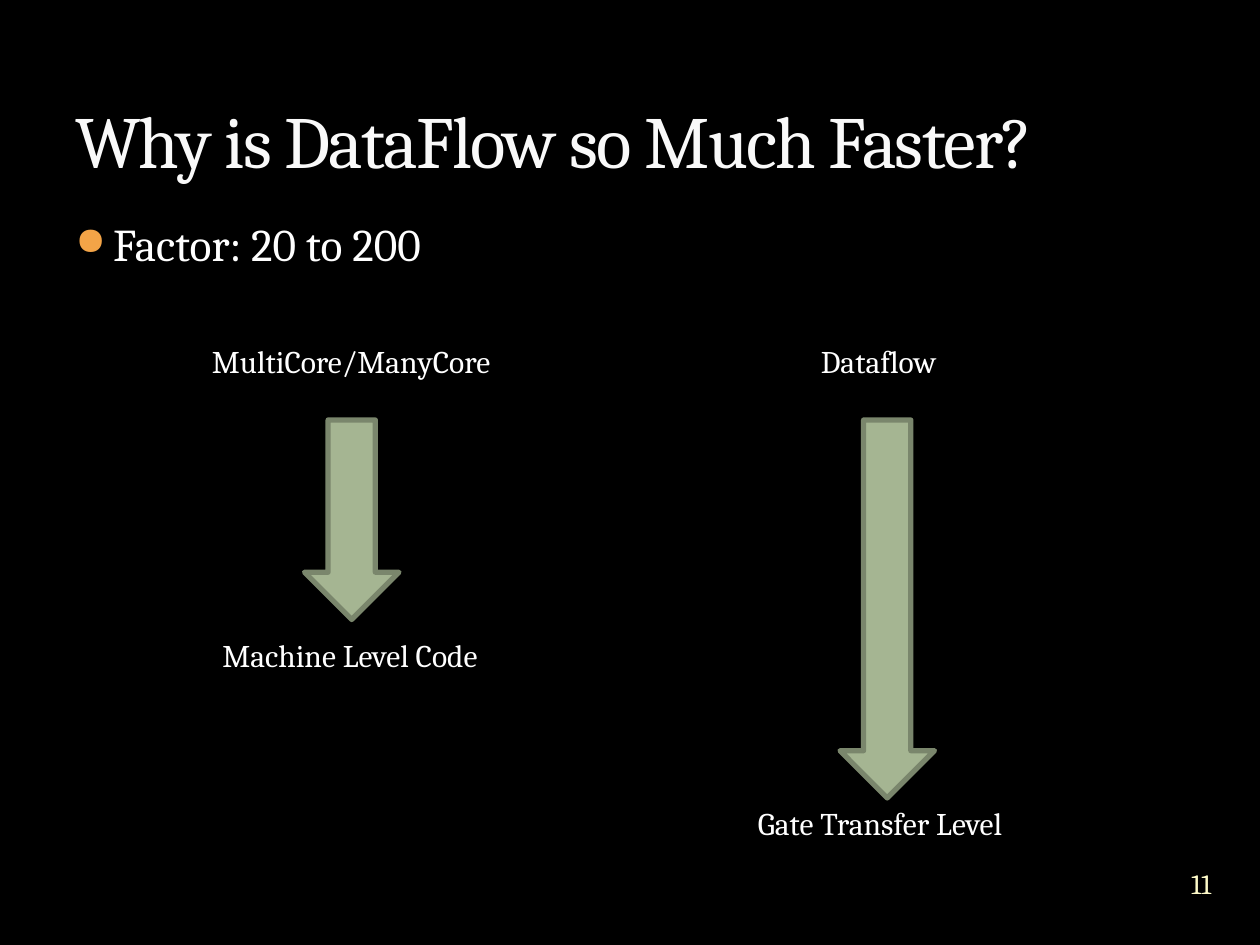
"""Build the slide that compares the depth of multicore and dataflow programming."""
import dataclasses

import lxml.etree
import pptx
import pptx.dml.color
import pptx.enum.shapes
import pptx.enum.text
import pptx.oxml.ns
import pptx.util

Pt = pptx.util.Pt
Align = pptx.enum.text.PP_ALIGN
Anchor = pptx.enum.text.MSO_ANCHOR


def rgb(code):
    return pptx.dml.color.RGBColor.from_string(code)


@dataclasses.dataclass(frozen=True)
class Theme:
    font: str = "Cambria"
    background: str = "000000"
    heading: str = "F9F9F9"
    text: str = "FFFFFF"
    bullet: str = "F3A447"
    number: str = "FEFAC9"
    arrow_fill: str = "A5B592"
    arrow_line: str = "7A866C"
    heading_size: int = 42
    body_size: int = 26
    label_size: int = 18
    number_size: int = 16


class SlideBuilder:
    def __init__(self, slide, theme):
        self.slide = slide
        self.theme = theme
        slide.background.fill.solid()
        slide.background.fill.fore_color.rgb = rgb(theme.background)

    def text(self, box, wording, size, color, anchor=Anchor.TOP, align=Align.LEFT):
        frame = self.slide.shapes.add_textbox(*map(Pt, box)).text_frame
        frame.word_wrap = True
        frame.vertical_anchor = anchor
        frame.text = wording
        paragraph = frame.paragraphs[0]
        paragraph.alignment = align
        font = paragraph.runs[0].font
        font.name = self.theme.font
        font.size = Pt(size)
        font.color.rgb = rgb(color)
        return frame

    def heading(self, box, wording):
        frame = self.text(box, wording, self.theme.heading_size, self.theme.heading, Anchor.BOTTOM)
        frame.paragraphs[0].runs[0].font._element.set("spc", "-100")

    def bullet(self, box, wording, indent=21.6):
        frame = self.text(box, wording, self.theme.body_size, self.theme.text)
        paragraph = frame.paragraphs[0]
        paragraph.space_before = Pt(6)
        properties = paragraph._p.get_or_add_pPr()
        properties.set("marL", str(Pt(indent)))
        properties.set("indent", str(-Pt(indent)))
        qn = pptx.oxml.ns.qn
        color = lxml.etree.SubElement(properties, qn("a:buClr"))
        lxml.etree.SubElement(color, qn("a:srgbClr"), val=self.theme.bullet)
        lxml.etree.SubElement(properties, qn("a:buSzPct"), val="85000")
        lxml.etree.SubElement(properties, qn("a:buChar"), char="●")

    def label(self, left, top, width, wording):
        self.text((left, top, width, 29), wording, self.theme.label_size, self.theme.text)

    def down_arrow(self, left, top, height, width=54):
        arrow = self.slide.shapes.add_shape(
            pptx.enum.shapes.MSO_SHAPE.DOWN_ARROW, *map(Pt, (left, top, width, height)))
        arrow.shadow.inherit = False
        arrow.fill.solid()
        arrow.fill.fore_color.rgb = rgb(self.theme.arrow_fill)
        arrow.line.color.rgb = rgb(self.theme.arrow_line)
        arrow.line.width = Pt(3)

    def page_number(self, box, wording):
        frame = self.text(box, wording, self.theme.number_size, self.theme.number,
                          Anchor.MIDDLE, Align.CENTER)
        frame.margin_left = frame.margin_right = frame.margin_top = frame.margin_bottom = 0


def main():
    deck = pptx.Presentation()
    deck.slide_width, deck.slide_height = Pt(720), Pt(540)
    builder = SlideBuilder(deck.slides.add_slide(deck.slide_layouts[6]), Theme())

    builder.bullet((36, 120, 648, 48), "Factor: 20 to 200")
    builder.heading((36, 12, 648, 96), "Why is DataFlow so Much Faster?")

    source_top, arrow_top = 192, 240
    builder.label(114, source_top, 192, "MultiCore/ManyCore")
    builder.label(462, source_top, 108, "Dataflow")
    builder.label(120, 360, 174, "Machine Level Code")
    builder.label(426, 456, 180, "Gate Transfer Level")
    for left, height in ((174, 114), (480, 216)):
        builder.down_arrow(left, arrow_top, height)

    builder.page_number((662.4, 486.5, 48, 36), "11")
    deck.save("out.pptx")


if __name__ == "__main__":
    main()
